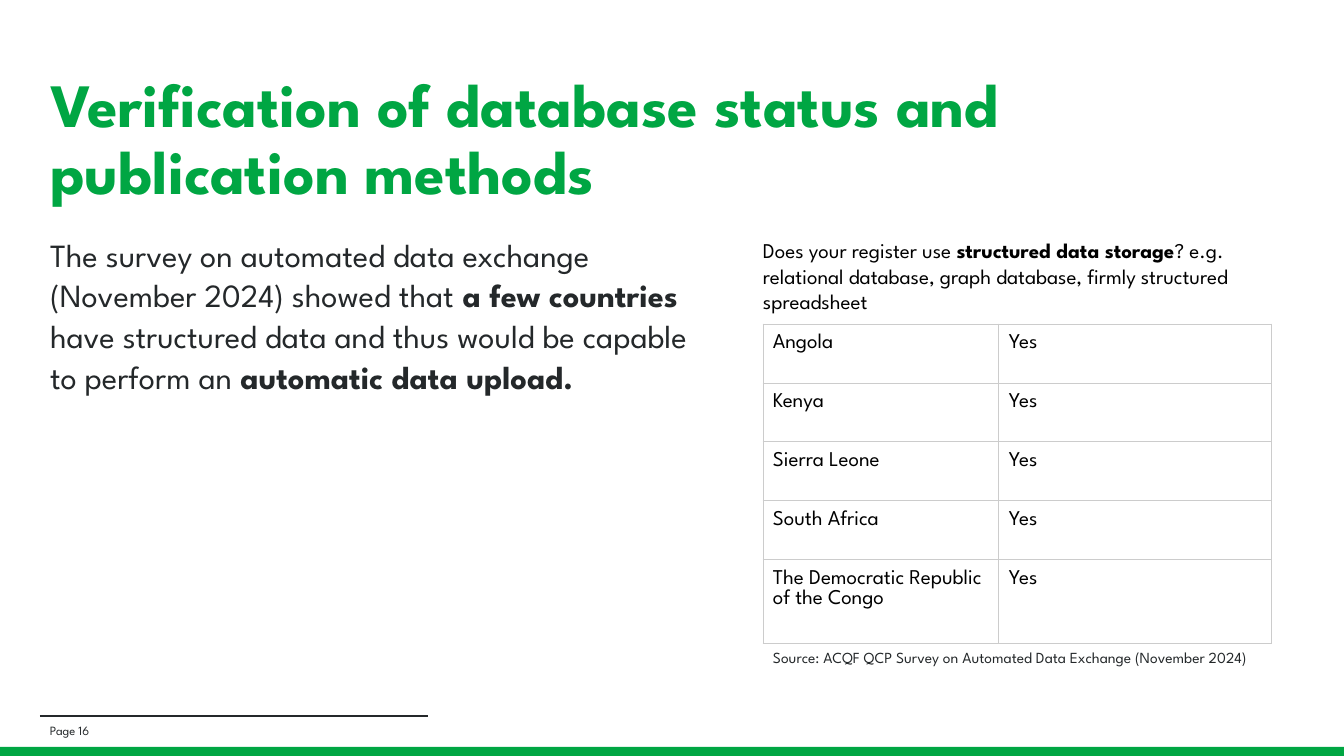
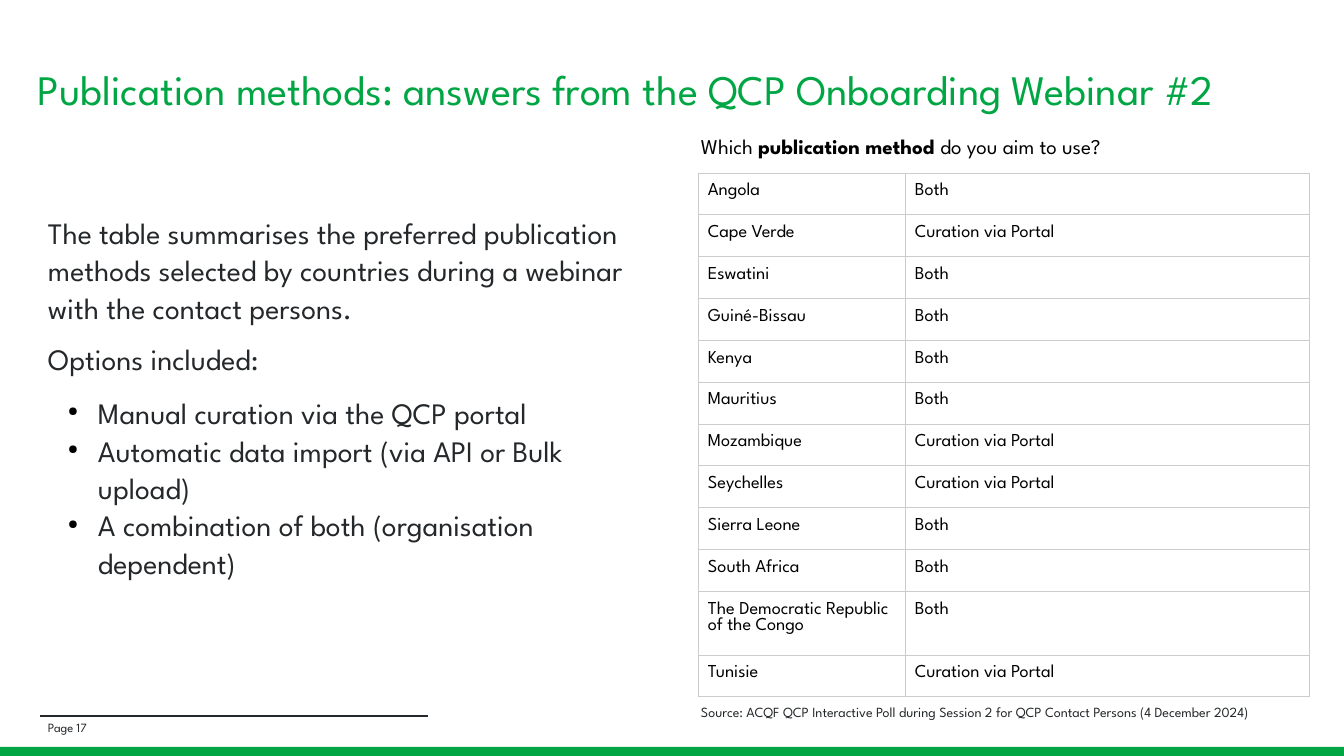
from lxml.etree import SubElement
from pptx import Presentation
from pptx.dml.color import RGBColor
from pptx.enum.shapes import MSO_CONNECTOR, MSO_SHAPE
from pptx.enum.text import MSO_ANCHOR
from pptx.oxml.ns import qn
from pptx.util import Pt

SCALE = 914400 / 100.8  # EMU in one px
FONT = "League Spartan"
HUES = {"green": "00A643", "ink": "24282A", "black": "000000", "grid": "CCCCCC"}
WIDE, HIGH = 1344, 756


def px(num):
    return round(num * SCALE)


def hue(name):
    return RGBColor.from_string(HUES[name])


def add_run(para, text, size, color, bold=False):
    run = para.add_run()
    run.text = text
    font = run.font
    font.name, font.size, font.bold = FONT, Pt(size), bold
    font.color.rgb = hue(color)


def add_dot(para):
    """Give a paragraph a small black bullet and a hanging indent."""
    props = para._p.get_or_add_pPr()
    props.set("marL", str(px(50)))
    props.set("indent", str(-px(30)))
    tint = SubElement(props, qn("a:buClr"))
    SubElement(tint, qn("a:srgbClr"), val=HUES["black"])
    SubElement(props, qn("a:buSzPct"), val="44000")
    SubElement(props, qn("a:buChar"), char="●")


def add_text(slide, box, paras, size, color="ink", pad=10, lead=None, mid=False):
    """Each paragraph is (runs, space before, bullet); a run is (text, bold)."""
    frame = slide.shapes.add_textbox(*map(px, box)).text_frame
    frame.word_wrap = True
    frame.margin_left = frame.margin_right = px(10)
    frame.margin_top = frame.margin_bottom = px(pad)
    frame.vertical_anchor = MSO_ANCHOR.MIDDLE if mid else MSO_ANCHOR.TOP
    for num, (runs, gap, dot) in enumerate(paras):
        para = frame.add_paragraph() if num else frame.paragraphs[0]
        if dot:
            add_dot(para)
        para.space_before = Pt(gap)
        if lead:
            para.line_spacing = lead
        for text, bold in runs:
            add_run(para, text, size, color, bold)


def add_line(slide, box, size, color="ink", bold=False, **opts):
    """A text box with a single run."""
    add_text(slide, box, [([(text_of(box, bold), bold)], 0, False)], size, color, **opts)


def plain(text, bold=False):
    return [([(text, bold)], 0, False)]


def add_edge(cell):
    props = cell._tc.get_or_add_tcPr()
    for side in ("lnL", "lnR", "lnT", "lnB"):
        line = SubElement(props, qn("a:" + side), w=str(Pt(0.75)))
        fill = SubElement(line, qn("a:solidFill"))
        SubElement(fill, qn("a:srgbClr"), val=HUES["grid"])


def add_grid(slide, left, top, cols, rows, data, size):
    grid = slide.shapes.add_table(
        len(rows), len(cols), px(left), px(top), px(sum(cols)), px(sum(rows))).table
    grid.first_row = grid.horz_banding = False
    for col, wide in zip(grid.columns, cols):
        col.width = px(wide)
    for row, high, texts in zip(grid.rows, rows, data):
        row.height = px(high)
        for cell, text in zip(row.cells, texts):
            add_edge(cell)
            cell.fill.background()
            cell.margin_left = cell.margin_right = px(10)
            cell.margin_top = cell.margin_bottom = px(10)
            add_run(cell.text_frame.paragraphs[0], text, size, "black")


def add_base(deck, page, left, top):
    """New slide with the green band, the rule and the page number."""
    slide = deck.slides.add_slide(deck.slide_layouts[6])
    band = slide.shapes.add_shape(
        MSO_SHAPE.RECTANGLE, *map(px, (0, 747, WIDE, HIGH - 747)))
    band.shadow.inherit = False
    band.fill.solid()
    band.fill.fore_color.rgb = hue("green")
    band.line.fill.background()
    rule = slide.shapes.add_connector(
        MSO_CONNECTOR.STRAIGHT, *map(px, (40, 716, 428, 716)))
    rule.line.color.rgb = hue("ink")
    rule.line.width = Pt(1.5)
    SubElement(rule._element.spPr, qn("a:effectLst"))
    add_text(slide, (left, top, 409, 19), plain(f"Page {page}"), 9, pad=5, mid=True)
    return slide


def add_status(deck):
    slide = add_base(deck, 16, 40, 721)
    add_text(slide, (40, 68, 1264, 146),
             plain("Verification of database status and publication methods", True),
             44, "green", pad=5, lead=0.9, mid=True)
    # Finding on the left
    body = [("The survey on automated data exchange (November 2024) showed that ", False),
            ("a few countries", True),
            (" have structured data and thus would be capable to perform an ", False),
            ("automatic data upload.", True)]
    add_text(slide, (40, 228, 677, 448), [(body, 0, False)], 23.1, pad=5, lead=1.05)
    # Survey answers on the right
    query = [("Does your register use ", False), ("structured data storage", True),
             ("? e.g. relational database, graph database, firmly structured spreadsheet",
              False)]
    add_text(slide, (753, 228, 530, 97), [(query, 0, False)], 15, "black")
    lands = ["Angola", "Kenya", "Sierra Leone", "South Africa",
             "The Democratic Republic of the Congo"]
    add_grid(slide, 763, 324, [236, 273], [59] * 4 + [84],
             [(land, "Yes") for land in lands], 15)
    add_text(slide, (763, 639, 560, 29),
             plain("Source: ACQF QCP Survey on Automated Data Exchange (November 2024)"), 11)


def add_poll(deck):
    slide = add_base(deck, 17, 38, 718)
    add_text(slide, (28, 59, 1218, 80),
             plain("Publication methods: answers from the QCP Onboarding Webinar #2"),
             30, "green", lead=0.9)
    # Options on the left
    lines = [("The table summarises the preferred publication methods selected by "
              "countries during a webinar with the contact persons.", 0, False),
             ("Options included:", 10, False),
             ("Manual curation via the QCP portal", 12, True),
             ("Automatic data import (via API or Bulk upload)", 0, True),
             ("A combination of both (organisation dependent)", 0, True)]
    add_text(slide, (38, 208, 629, 486),
             [([(text, False)], gap, dot) for text, gap, dot in lines],
             21.2, pad=5, lead=1.05)
    # Poll answers on the right
    query = [("Which ", False), ("publication method ", True),
             ("do you aim to use?", False)]
    add_text(slide, (691, 124, 522, 45), [(query, 0, False)], 15, "black")
    both, portal = "Both", "Curation via Portal"
    data = [("Angola", both), ("Cape Verde", portal), ("Eswatini", both),
            ("Guiné-Bissau", both), ("Kenya", both), ("Mauritius", both),
            ("Mozambique", portal), ("Seychelles", portal), ("Sierra Leone", both),
            ("South Africa", both), ("The Democratic Republic of the Congo", both),
            ("Tunisie", portal)]
    add_grid(slide, 698, 173, [207, 405], [37] * 10 + [54, 37], data, 13)
    add_text(slide, (691, 695, 647, 29),
             plain("Source: ACQF QCP Interactive Poll during Session 2 for QCP "
                   "Contact Persons (4 December 2024)"), 10)


def main():
    deck = Presentation()
    deck.slide_width, deck.slide_height = px(WIDE), px(HIGH)
    add_status(deck)
    add_poll(deck)
    deck.save("out.pptx")


if __name__ == "__main__":
    main()
